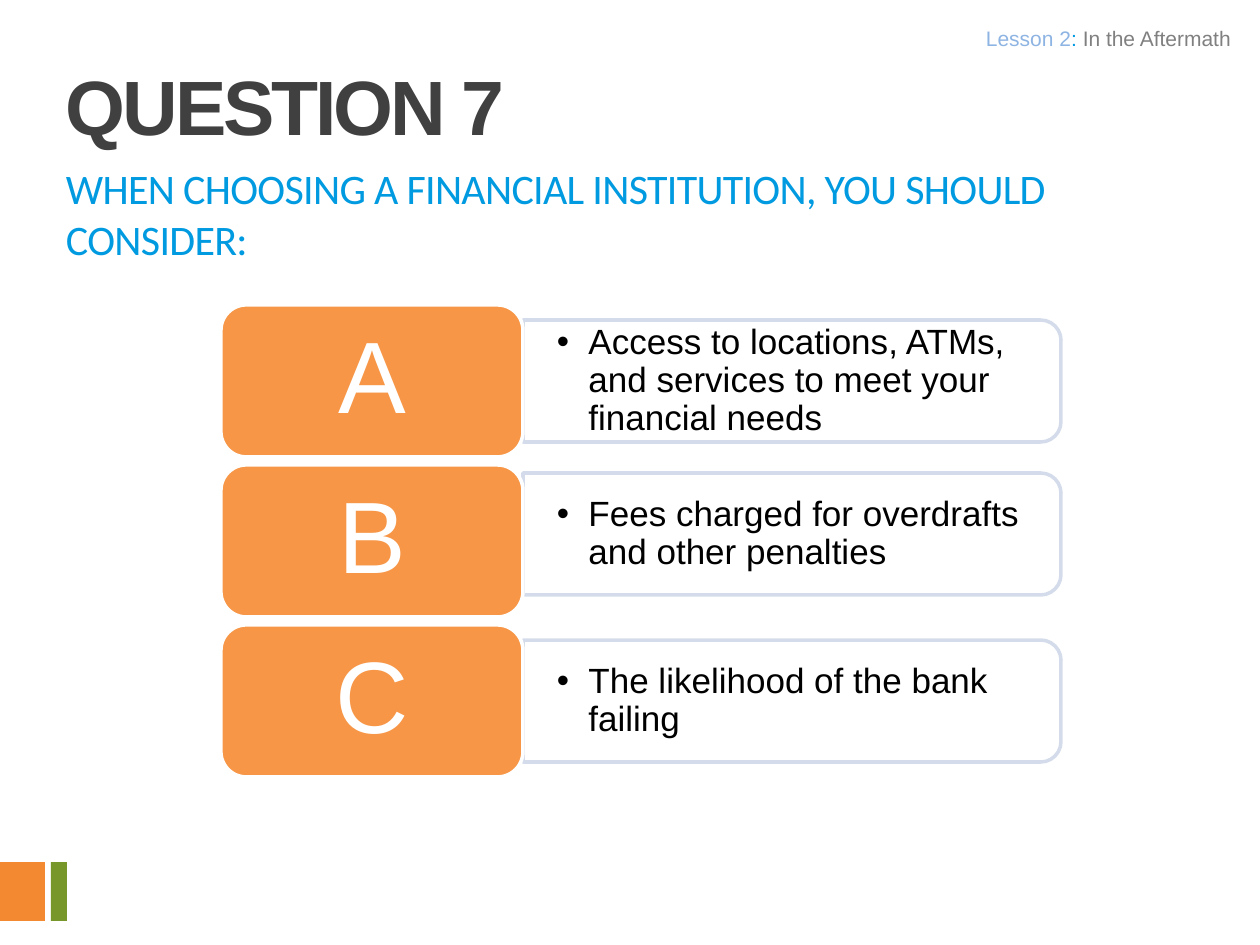
from pptx import Presentation
from pptx.dml.color import RGBColor
from pptx.enum.shapes import MSO_SHAPE
from pptx.enum.text import MSO_ANCHOR, PP_ALIGN
from pptx.oxml.ns import qn
from pptx.util import Emu, Pt
from lxml.etree import SubElement

SCALE = 914400 / 126


def paint(color_format, value, opacity=100):
    color_format.solid()
    color_format.fore_color.rgb = RGBColor.from_string(value)
    if opacity < 100:
        color = color_format._xPr.find(".//" + qn("a:srgbClr"))
        SubElement(color, qn("a:alpha")).set("val", str(opacity * 1000))


def write(place, spans, size, inset, font="Arial", spacing=0, bullet=False, bold=False, **formats):
    box = page.shapes.add_textbox(*[Emu(round(n * SCALE)) for n in place])
    frame = box.text_frame
    frame.word_wrap = True
    frame.vertical_anchor = formats.pop("anchor", MSO_ANCHOR.TOP)
    across, down = [Emu(round(n * SCALE)) for n in inset]
    margins = {"margin_left": across, "margin_right": across, "margin_top": down, "margin_bottom": down}
    for name, value in margins.items():
        setattr(frame, name, value)
    para = frame.paragraphs[0]
    for name, value in formats.items():
        setattr(para, name, value)
    if bullet:
        para.level = 1
        props = para._p.get_or_add_pPr()
        props.set("marL", "228600")
        props.set("indent", "-228600")
        SubElement(props, qn("a:buFont")).set("typeface", "Arial")
        SubElement(props, qn("a:buChar")).set("char", "•")
    for text, color in spans:
        span = para.add_run()
        span.text = text
        for name, value in {"name": font, "size": Pt(size), "bold": bold}.items():
            setattr(span.font, name, value)
        paint(span.font.fill, color)
        if spacing:
            span._r.get_or_add_rPr().set("spc", str(spacing))


deck = Presentation()
deck.slide_width = Emu(round(1260 * SCALE))
deck.slide_height = Emu(round(945 * SCALE))
page = deck.slides.add_slide(deck.slide_layouts[6])

for left, width, color in [(0, 45, "F38A31"), (51, 16, "77972B")]:
    accent = page.shapes.add_shape(
        MSO_SHAPE.RECTANGLE, *[Emu(round(n * SCALE)) for n in (left, 862, width, 59)])
    accent.shadow.inherit = False
    paint(accent.fill, color)
    accent.line.fill.background()

write((53, 157, 1113, 116),
      [("WHEN CHOOSING A FINANCIAL INSTITUTION, YOU SHOULD CONSIDER:", "009AE1")],
      24, (13, 6), font="Calibri", spacing=-40)

answers = [
    ("A", 381, "Access to locations, ATMs, and services to meet your financial needs"),
    ("B", 534, "Fees charged for overdrafts and other penalties"),
    ("C", 701, "The likelihood of the bank failing"),
]
for row, (letter, middle, answer) in enumerate(answers):
    top = 305 + 160 * row
    panel = (MSO_SHAPE.ROUND_2_SAME_RECTANGLE, (731, middle - 269, 122, 538), 90, "FFFFFF", "D0D8E8", 90)
    tile = (MSO_SHAPE.ROUNDED_RECTANGLE, (221, top, 302, 152), 0, "F79646", "FFFFFF", 100)
    for kind, place, turn, fill, edge, opacity in (panel, tile):
        shape = page.shapes.add_shape(kind, *[Emu(round(n * SCALE)) for n in place])
        shape.shadow.inherit = False
        shape.rotation = turn
        paint(shape.fill, fill, opacity)
        paint(shape.line.fill, edge, opacity)
        shape.line.width = Pt(2)
        if kind == MSO_SHAPE.ROUND_2_SAME_RECTANGLE:
            write((523, middle - 55, 532, 110), [(answer, "000000")], 20, (34, 18),
                  bullet=True, anchor=MSO_ANCHOR.MIDDLE, line_spacing=0.9)
    write((228, top + 7, 288, 138), [(letter, "FFFFFF")], 58, (30, 15),
          anchor=MSO_ANCHOR.MIDDLE, alignment=PP_ALIGN.CENTER, line_spacing=0.9)

write((504, 21, 737, 40),
      [("Lesson 2", "8EB4E3"), (": ", "009AE1"), ("In the Aftermath", "808080")],
      12, (10, 5), alignment=PP_ALIGN.RIGHT)
write((53, 42, 1091, 105), [("QUESTION 7", "404040")], 44, (13, 6),
      spacing=-180, bold=True, line_spacing=Pt(59))

deck.save("out.pptx")
